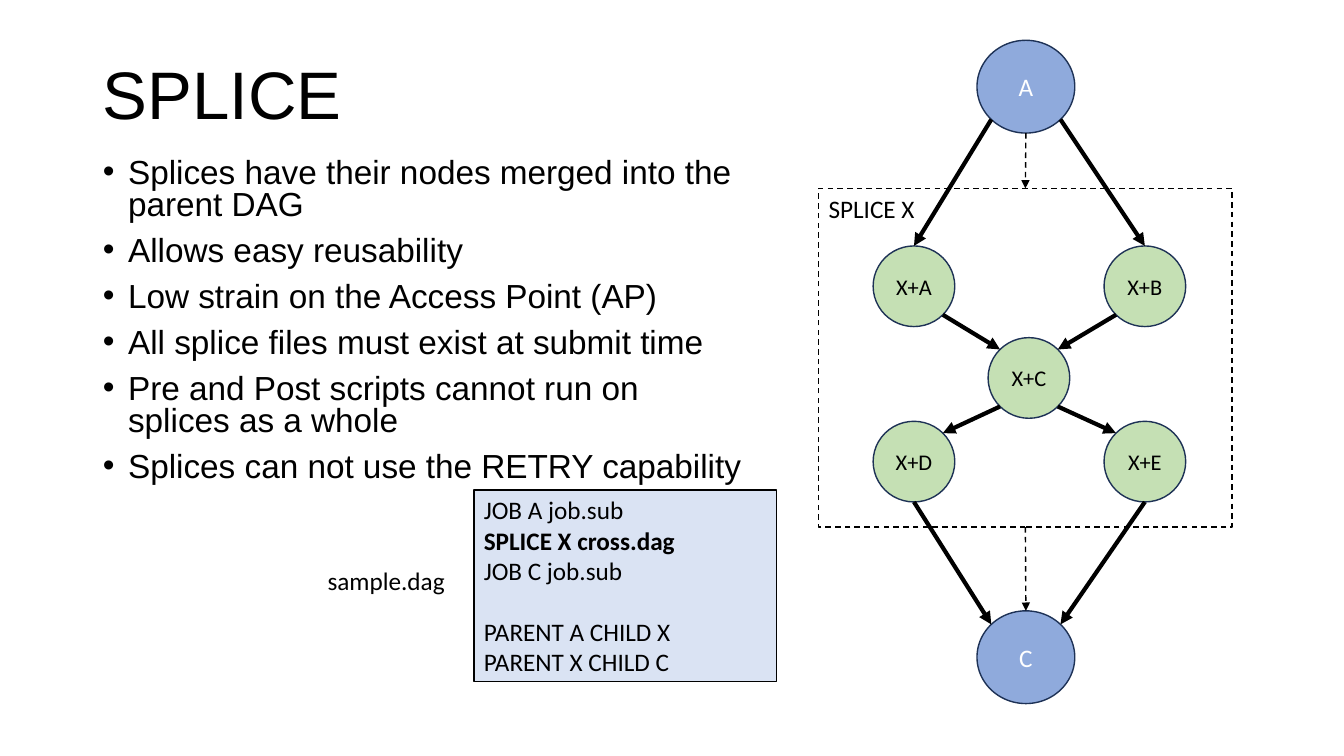
from math import sqrt

from lxml import etree
from pptx import Presentation
from pptx.dml.color import RGBColor
from pptx.enum.dml import MSO_LINE
from pptx.enum.shapes import MSO_CONNECTOR, MSO_SHAPE
from pptx.enum.text import MSO_ANCHOR, MSO_AUTO_SIZE, PP_ALIGN
from pptx.oxml.ns import qn
from pptx.util import Inches, Pt

ELLIPSE, RECTANGLE = MSO_SHAPE.OVAL, MSO_SHAPE.RECTANGLE
STRAIGHT = MSO_CONNECTOR.STRAIGHT
DASH = MSO_LINE.DASH
LEFT, CENTER = PP_ALIGN.LEFT, PP_ALIGN.CENTER
TOP, MIDDLE = MSO_ANCHOR.TOP, MSO_ANCHOR.MIDDLE
NO_FIT = MSO_AUTO_SIZE.NONE

COLORS = {
    "black": "000000",
    "white": "FFFFFF",
    "outline": "1E3256",
    "job": "8FAADC",
    "splice_node": "C5E0B4",
    "code": "DAE3F3",
}
HEADING_FONT, DIAGRAM_FONT = "Arial", "Calibri"
DIAGONAL = sqrt(0.5)


class DagSlide:
    def __init__(self, slide):
        self.slide = slide
        self.shapes = slide.shapes

    def color(self, name):
        return RGBColor.from_string(COLORS[name])

    def style(self, paragraph, size, font=DIAGRAM_FONT, color="black", align=LEFT):
        paragraph.alignment = align
        paragraph.font.size = Pt(size)
        paragraph.font.name = font
        paragraph.font.color.rgb = self.color(color)

    def place(self, placeholder, left, top, width, height, anchor):
        placeholder.left, placeholder.top = Inches(left), Inches(top)
        placeholder.width, placeholder.height = Inches(width), Inches(height)
        frame = placeholder.text_frame
        frame.word_wrap = True
        frame.auto_size = NO_FIT
        frame.vertical_anchor = anchor
        return frame

    def title(self, text, *box):
        frame = self.place(self.shapes.title, *box, MIDDLE)
        frame.text = text
        heading = frame.paragraphs[0]
        heading.line_spacing = 0.9
        self.style(heading, 48, HEADING_FONT)

    def bullets(self, items, *box):
        frame = self.place(self.slide.placeholders[1], *box, TOP)
        frame.text = "\n".join(items)
        for index, point in enumerate(frame.paragraphs):
            point.line_spacing = 0.8
            point.space_before = Pt(10 if index else 0)
            properties = point._p.get_or_add_pPr()
            properties.set("marL", str(Inches(0.25)))
            properties.set("indent", str(-Inches(0.25)))
            etree.SubElement(properties, qn("a:buFont"), typeface="Arial")
            etree.SubElement(properties, qn("a:buChar"), char="•")
            self.style(point, 23.8, HEADING_FONT)

    def block(self, kind, left, top, width, height, fill=None, line="black", dash=None):
        block = self.shapes.add_shape(
            kind, Inches(left), Inches(top), Inches(width), Inches(height))
        block.shadow.inherit = False
        if fill:
            block.fill.solid()
            block.fill.fore_color.rgb = self.color(fill)
        else:
            block.fill.background()
        block.line.color.rgb = self.color(line)
        block.line.width = Pt(1)
        if dash:
            block.line.dash_style = dash
        return block

    def node(self, text, left, top, width, height, fill, size, color):
        node = self.block(ELLIPSE, left, top, width, height, fill, "outline")
        frame = node.text_frame
        frame.word_wrap = False
        frame.vertical_anchor = MIDDLE
        frame.text = text
        self.style(frame.paragraphs[0], size, color=color, align=CENTER)
        return node

    def panel(self, lines, *box, fill=None, dash=None):
        panel = self.block(RECTANGLE, *box, fill=fill, dash=dash)
        frame = panel.text_frame
        frame.word_wrap = True
        frame.vertical_anchor = TOP
        frame.text = "\n".join(lines)
        for line in frame.paragraphs:
            self.style(line, 18)
        return panel

    def label(self, text, left, top, width, height):
        label = self.shapes.add_textbox(
            Inches(left), Inches(top), Inches(width), Inches(height))
        label.text_frame.word_wrap = True
        label.text_frame.text = text
        self.style(label.text_frame.paragraphs[0], 18, align=CENTER)

    def rim(self, node, across, down):
        return (int(node.left + node.width * (1 + across) / 2),
                int(node.top + node.height * (1 + down) / 2))

    def arrow(self, start, end, width=3, dash=None):
        arrow = self.shapes.add_connector(STRAIGHT, *start, *end)
        arrow.line.color.rgb = self.color("black")
        arrow.line.width = Pt(width)
        if dash:
            arrow.line.dash_style = dash
        etree.SubElement(arrow.line._get_or_add_ln(), qn("a:tailEnd"), type="triangle")
        etree.SubElement(arrow._element.spPr, qn("a:effectLst"))
        return arrow


def main():
    deck = Presentation()
    deck.slide_width, deck.slide_height = Inches(13.33), Inches(7.5)
    page = DagSlide(deck.slides.add_slide(deck.slide_layouts[1]))

    page.title("SPLICE", 0.92, 0.4, 3, 1.13)
    page.bullets([
        "Splices have their nodes merged into the parent DAG",
        "Allows easy reusability",
        "Low strain on the Access Point (AP)",
        "All splice files must exist at submit time",
        "Pre and Post scripts cannot run on splices as a whole",
        "Splices can not use the RETRY capability",
    ], 0.92, 1.53, 6.58, 3.71)

    first_job, last_job = [
        page.node(name, 9.69, top, 0.97, 0.92, "job", 18, "white")
        for name, top in (("A", 0.4), ("C", 6.06))]
    splice = page.panel(["SPLICE X"], 8.12, 1.87, 4.1, 3.36, dash=DASH)
    members = {
        name: page.node(f"X+{name}", left, top, 0.81, 0.8, "splice_node", 16, "black")
        for name, left, top in (("A", 8.66, 2.44), ("B", 10.95, 2.44), ("C", 9.8, 3.35),
                                ("D", 8.66, 4.18), ("E", 10.95, 4.18))}
    hub = members["C"]

    for upper, lower, side in (("A", "D", -DIAGONAL), ("B", "E", DIAGONAL)):
        entry, leaf = members[upper], members[lower]
        page.arrow(page.rim(first_job, side, DIAGONAL), page.rim(entry, 0, -1))
        page.arrow(page.rim(entry, -side, DIAGONAL), page.rim(hub, side, -DIAGONAL))
        page.arrow(page.rim(hub, side, DIAGONAL), page.rim(leaf, -side, -DIAGONAL))
        page.arrow(page.rim(leaf, 0, 1), page.rim(last_job, side, -DIAGONAL))

    into_splice = page.arrow(
        page.rim(first_job, 0, 1), page.rim(splice, 0, -1), 1, DASH)
    into_splice.end_connect(splice, 0)
    out_of_splice = page.arrow(
        page.rim(splice, 0, 1), page.rim(last_job, 0, -1), 1, DASH)
    out_of_splice.begin_connect(splice, 2)

    code = page.panel([
        "JOB A job.sub",
        "SPLICE X cross.dag",
        "JOB C job.sub",
        "PARENT A CHILD X",
        "PARENT X CHILD C",
    ], 4.7, 4.86, 3, 1.9, fill="code").text_frame.paragraphs
    code[1].font.bold = True
    code[3].space_before = Pt(22)
    page.label("sample.dag", 2.58, 5.56, 2.5, 0.4)

    deck.save("out.pptx")


if __name__ == "__main__":
    main()
